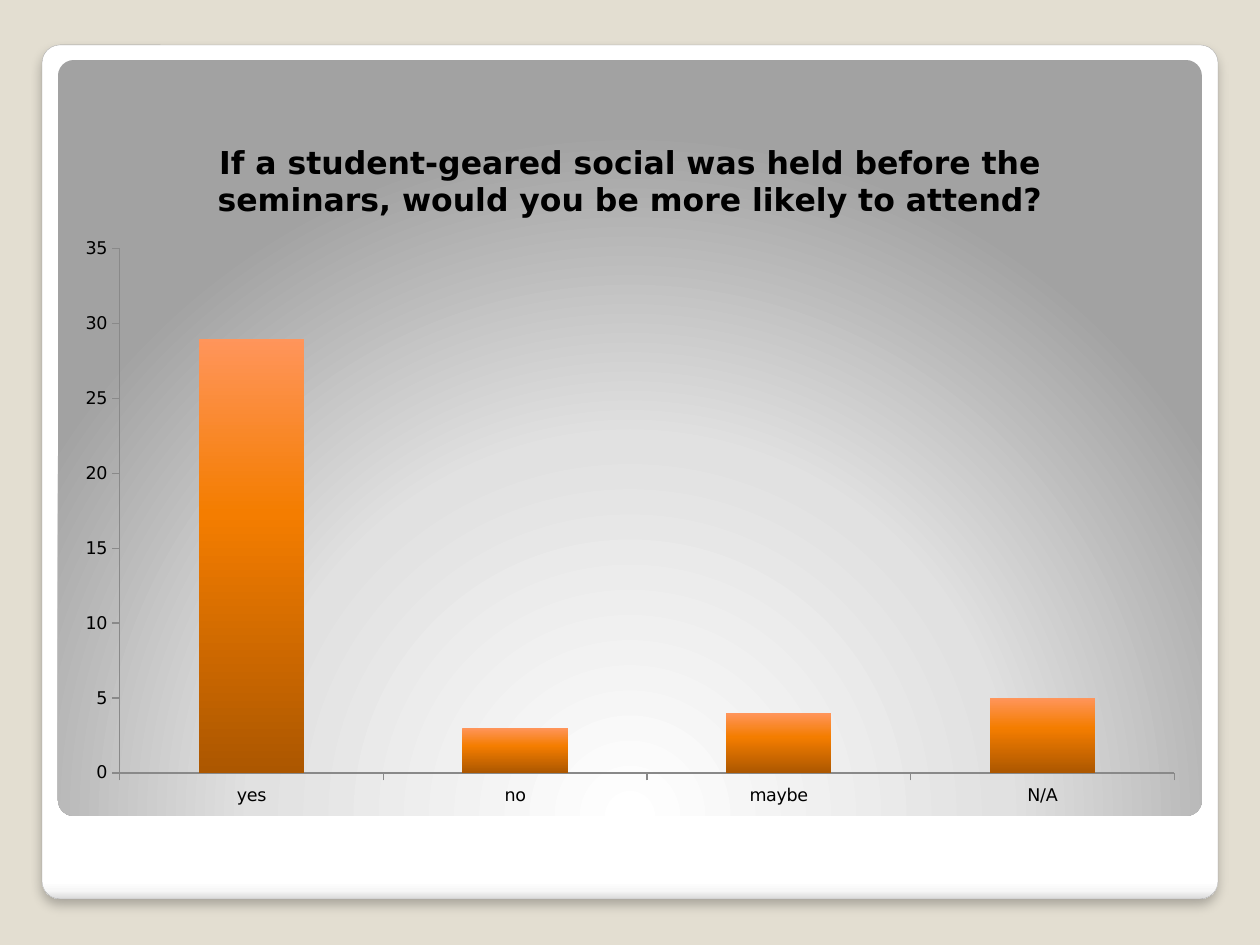
from lxml.etree import SubElement
from pptx import Presentation
from pptx.chart.data import CategoryChartData
from pptx.dml.color import RGBColor
from pptx.enum.chart import XL_CHART_TYPE, XL_TICK_MARK
from pptx.enum.shapes import MSO_SHAPE
from pptx.oxml import parse_xml
from pptx.oxml.ns import nsdecls, qn
from pptx.util import Emu, Pt

SCALE = 914400 / 126


def px(length):
    return Emu(round(length * SCALE))


def color(value):
    return RGBColor.from_string(value)


def gradient(fill, properties, stops, direction):
    fill.background()
    stop_list = "".join(
        f'<a:gs pos="{position * 1000}"><a:srgbClr val="{value}"/></a:gs>'
        for position, value in stops
    )
    element = parse_xml(
        f'<a:gradFill {nsdecls("a")} rotWithShape="1">'
        f"<a:gsLst>{stop_list}</a:gsLst>{direction}</a:gradFill>"
    )
    properties.replace(properties.find(qn("a:noFill")), element)


class SurveySlide:
    """Holds the style and the current slide, and adds each kind of element."""

    font = "DejaVu Sans"
    text = "000000"
    axis = "898989"
    corner = 0.021
    down = '<a:lin ang="5400000" scaled="0"/>'
    glow = (
        '<a:path path="circle">'
        '<a:fillToRect l="50000" t="175000" r="50000" b="-75000"/></a:path>'
    )

    def __init__(self, presentation, background):
        self.slide = presentation.slides.add_slide(presentation.slide_layouts[6])
        self.slide.background.fill.solid()
        self.slide.background.fill.fore_color.rgb = color(background)

    def panel(self, left, top, width, height, stops, direction):
        shape = self.slide.shapes.add_shape(
            MSO_SHAPE.ROUNDED_RECTANGLE, px(left), px(top), px(width), px(height)
        )
        shape.adjustments[0] = self.corner
        shape.shadow.inherit = False
        shape.line.fill.background()
        gradient(shape.fill, shape._element.spPr, stops, direction)
        return shape

    def outline(self, shape, value, width):
        shape.line.color.rgb = color(value)
        shape.line.width = Pt(width)

    def shadow(self, shape, value, opacity, blur, distance):
        effects = shape._element.spPr.find(qn("a:effectLst"))
        effects.append(parse_xml(
            f'<a:outerShdw {nsdecls("a")} blurRad="{Pt(blur)}" dist="{Pt(distance)}" '
            f'dir="5400000" algn="ctr" rotWithShape="0"><a:srgbClr val="{value}">'
            f'<a:alpha val="{opacity * 1000}"/></a:srgbClr></a:outerShdw>'
        ))

    def style_font(self, font, size, bold=False):
        font.name = self.font
        font.size = Pt(size)
        font.bold = bold
        font.color.rgb = color(self.text)

    def column_chart(self, left, top, width, height, title, answers, stops):
        data = CategoryChartData()
        data.categories = list(answers)
        data.add_series("Series 1", list(answers.values()))
        chart = self.slide.shapes.add_chart(
            XL_CHART_TYPE.COLUMN_CLUSTERED,
            px(left), px(top), px(width), px(height), data,
        ).chart
        self.style_font(chart.font, 10)
        chart.has_legend = False
        chart.has_title = True
        run = chart.chart_title.text_frame.paragraphs[0].add_run()
        run.text = title
        self.style_font(run.font, 18, bold=True)
        chart.chart_title.include_in_layout = False

        for axis in (chart.category_axis, chart.value_axis):
            axis.has_major_gridlines = False
            axis.major_tick_mark = XL_TICK_MARK.OUTSIDE
            axis.minor_tick_mark = XL_TICK_MARK.NONE
            axis.format.line.color.rgb = color(self.axis)
            axis.format.line.width = Pt(0.75)
        chart.value_axis.minimum_scale = 0
        chart.value_axis.maximum_scale = 35
        chart.value_axis.major_unit = 5

        plot = chart.plots[0]
        plot.gap_width = 150
        plot.vary_by_categories = False
        series = plot.series[0]
        gradient(
            series.format.fill, series._element.get_or_add_spPr(), stops, self.down
        )
        self.place_plot(chart, x=0.05, y=0.19, w=0.93, h=0.75)

    def place_plot(self, chart, **fractions):
        plot_area = chart._chartSpace.chart.plotArea
        layout = plot_area.find(qn("c:layout"))
        if layout is None:
            layout = parse_xml(f'<c:layout {nsdecls("c")}/>')
            plot_area.insert(0, layout)
        manual = SubElement(layout, qn("c:manualLayout"))
        settings = {"layoutTarget": "inner", "xMode": "edge", "yMode": "edge"}
        for name, value in (settings | fractions).items():
            SubElement(manual, qn(f"c:{name}")).set("val", str(value))


def main():
    presentation = Presentation()
    presentation.slide_width = px(1260)
    presentation.slide_height = px(945)
    survey = SurveySlide(presentation, "E3DED1")

    frame = survey.panel(
        42, 45, 1176, 854,
        [(0, "FFFFFF"), (98, "FFFFFF"), (99, "F7F7F7"), (100, "DADADA")],
        survey.down,
    )
    survey.outline(frame, "A4A4A4", 0.16)
    survey.shadow(frame, "000000", opacity=25, blur=6, distance=4)
    survey.panel(
        58, 60, 1144, 756,
        [(0, "FFFFFF"), (55, "E1E1E1"), (100, "A2A2A2")],
        survey.glow,
    )
    survey.column_chart(
        63, 116, 1134, 699,
        "If a student-geared social was held before the seminars, "
        "would you be more likely to attend?",
        {"yes": 29, "no": 3, "maybe": 4, "N/A": 5},
        [(0, "FF955B"), (40, "F47D00"), (100, "AC5700")],
    )
    presentation.save("out.pptx")


if __name__ == "__main__":
    main()
